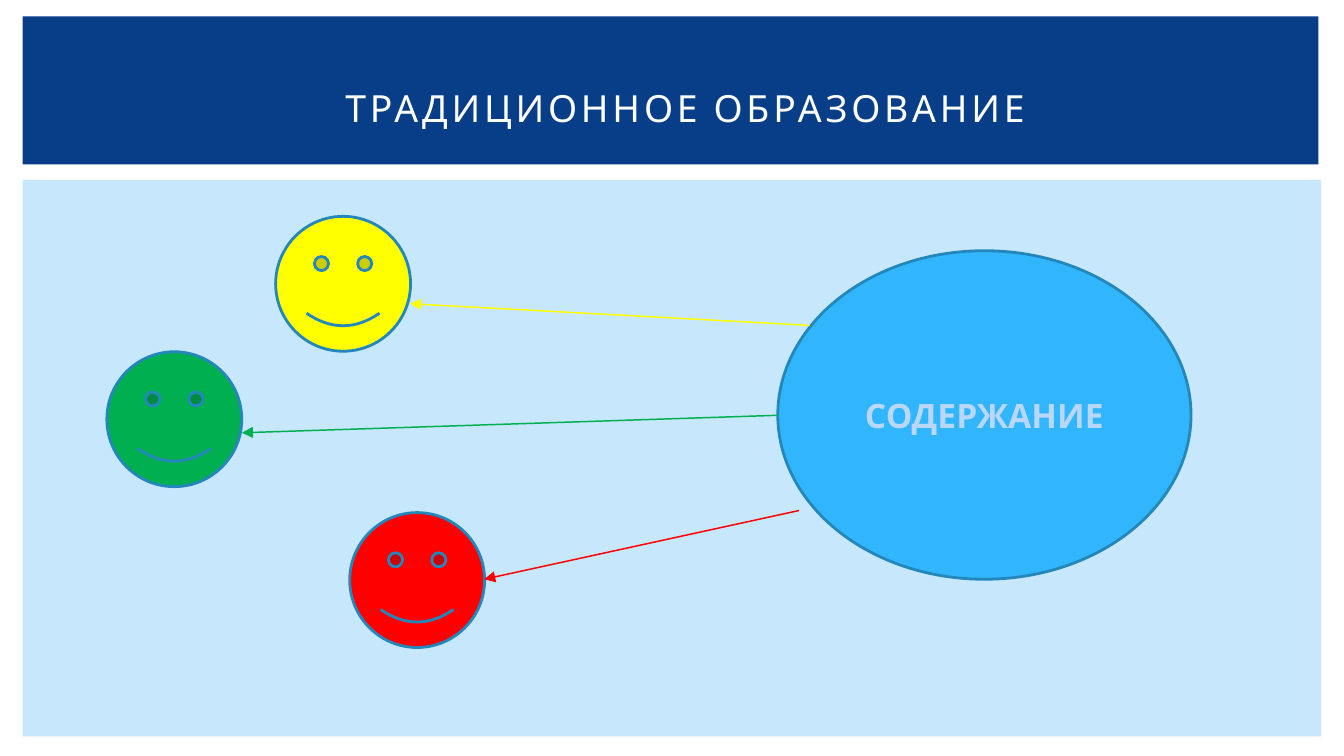
import pptx
import pptx.dml.color
import pptx.enum.shapes
import pptx.enum.text
import pptx.oxml.ns
import pptx.util
from lxml import etree

Cm = pptx.util.Cm
Pt = pptx.util.Pt
Shapes = pptx.enum.shapes.MSO_SHAPE


def color(value):
    """Turn a hex string into a colour."""
    return pptx.dml.color.RGBColor.from_string(value)


class Painter:
    """Hold the style and the current slide, and draw each kind of element."""

    font = "Cabin"
    outline = "2487BB"

    def __init__(self, slide):
        """Keep the slide to draw on."""
        self.slide = slide

    def shape(self, kind, left, top, width, height, fill, outlined=True):
        """Add a filled preset shape."""
        shape = self.slide.shapes.add_shape(kind, Cm(left), Cm(top), Cm(width), Cm(height))
        shape.shadow.inherit = False
        shape.fill.solid()
        shape.fill.fore_color.rgb = color(fill)
        if outlined:
            shape.line.color.rgb = color(self.outline)
            shape.line.width = Pt(1.5)
        else:
            shape.line.fill.background()
        return shape

    def label(self, shape, text, size, fill, bold=False, spacing=0):
        """Put centred text into a shape."""
        frame = shape.text_frame
        frame.text = text
        frame.word_wrap = True
        frame.vertical_anchor = pptx.enum.text.MSO_ANCHOR.MIDDLE
        paragraph = frame.paragraphs[0]
        paragraph.alignment = pptx.enum.text.PP_ALIGN.CENTER
        run = paragraph.runs[0]
        run.font.name = self.font
        run.font.size = Pt(size)
        run.font.bold = bold
        run.font.color.rgb = color(fill)
        if spacing:
            run.font._element.set("spc", str(spacing * 100))

    def textbox(self, left, top, width, height, text, **style):
        """Add a text box."""
        box = self.slide.shapes.add_textbox(Cm(left), Cm(top), Cm(width), Cm(height))
        self.label(box, text, **style)

    def arrow(self, start, end, fill):
        """Add a straight arrow that points at its end."""
        connector = self.slide.shapes.add_connector(
            pptx.enum.shapes.MSO_CONNECTOR.STRAIGHT, *map(Cm, start + end))
        connector.line.color.rgb = color(fill)
        connector.line.width = Pt(0.79)
        qn = pptx.oxml.ns.qn
        line = connector._element.spPr.find(qn("a:ln"))
        etree.SubElement(line, qn("a:tailEnd"), type="triangle")
        etree.SubElement(connector._element.spPr, qn("a:effectLst"))


def main():
    """Build the slide and save it."""
    presentation = pptx.Presentation()
    presentation.slide_width = Cm(25.4)
    presentation.slide_height = Cm(14.29)
    painter = Painter(presentation.slides.add_slide(presentation.slide_layouts[6]))

    painter.shape(Shapes.RECTANGLE, 0.43, 3.4, 24.54, 10.52, "C6E7FC", outlined=False)
    painter.shape(Shapes.RECTANGLE, 0.43, 0.31, 24.49, 2.8, "073E87", outlined=False)
    painter.textbox(1.3, 0.95, 23.3, 2.18, "ТРАДИЦИОННОЕ ОБРАЗОВАНИЕ",
                    size=20, fill="FFFFFF", spacing=2)

    content = painter.shape(Shapes.OVAL, 14.7, 4.74, 7.81, 6.21, "31B6FD")
    painter.label(content, "СОДЕРЖАНИЕ", size=18, fill="B9D6FB", bold=True)

    face_size = 2.55
    learners = [
        ("FFFF00", (5.21, 4.09), (15.3, 6.15), (7.75, 5.74)),
        ("00B050", (2.02, 6.65), (14.7, 7.85), (4.57, 8.18)),
        ("FF0000", (6.61, 9.69), (15.1, 9.65), (9.15, 10.95)),
    ]
    for fill, corner, start, end in learners:
        painter.shape(Shapes.SMILEY_FACE, *corner, face_size, face_size, fill)
        painter.arrow(start, end, fill)

    presentation.save("out.pptx")


if __name__ == "__main__":
    main()
